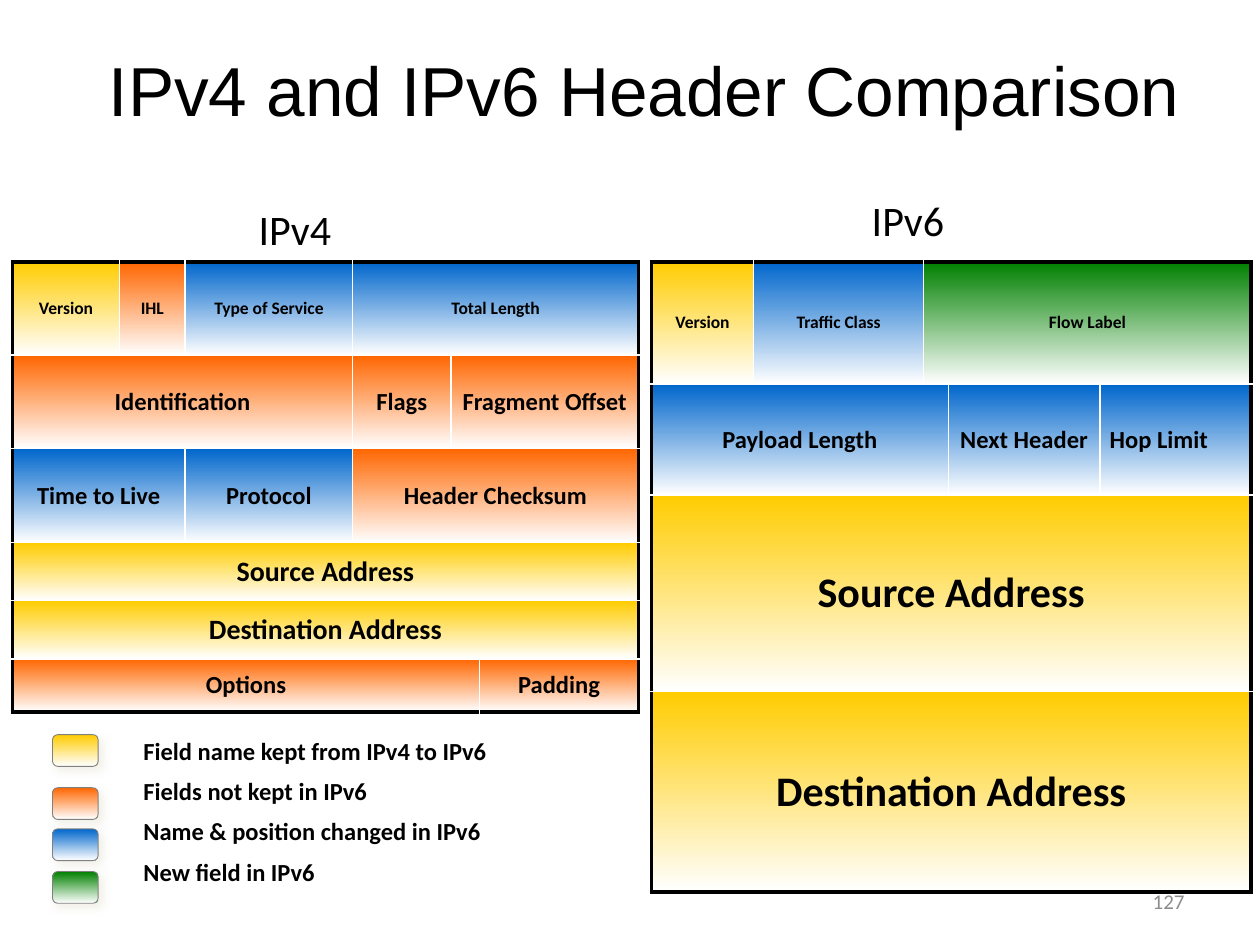
from dataclasses import dataclass

from lxml.etree import SubElement
from pptx import Presentation
from pptx.dml.color import RGBColor
from pptx.enum.shapes import MSO_SHAPE as Shape
from pptx.enum.text import MSO_ANCHOR as Anchor, MSO_AUTO_SIZE as AutoSize, PP_ALIGN as Align
from pptx.oxml.ns import qn
from pptx.util import Cm, Pt

COLORS = {
    "kept": "FFCC00",
    "dropped": "FF6600",
    "changed": "0066CC",
    "new": "008000",
    "white": "FFFFFF",
    "black": "000000",
    "outline": "808080",
    "shadow": "EEECE1",
    "number": "8C8C8C",
}


@dataclass
class Field:
    text: str
    status: str
    span: int = 1
    align: Align = Align.CENTER


@dataclass
class Row:
    height: float
    size: float
    fields: list[Field]


@dataclass
class Header:
    left: float
    top: float
    columns: list[float]
    rows: list[Row]


@dataclass
class Label:
    text: str
    box: tuple[float, float, float, float]
    size: float
    color: str
    align: Align
    wrap: bool = True


@dataclass
class LegendEntry:
    text: str
    status: str
    top: float


IPV4 = Header(0.25, 5.28, [2.16, 1.32, 3.38, 1.98, 0.58, 3.2], [
    Row(1.88, 10, [Field("Version", "kept"), Field("IHL", "dropped"),
                   Field("Type of Service", "changed"), Field("Total Length", "changed", 3)]),
    Row(1.88, 14, [Field("Identification", "dropped", 3), Field("Flags", "dropped"),
                   Field("Fragment Offset", "dropped", 2)]),
    Row(1.9, 14, [Field("Time to Live", "changed", 2), Field("Protocol", "changed"),
                  Field("Header Checksum", "dropped", 3)]),
    Row(1.17, 16, [Field("Source Address", "kept", 6)]),
    Row(1.17, 16, [Field("Destination Address", "kept", 6)]),
    Row(1.07, 14, [Field("Options", "dropped", 5), Field("Padding", "dropped")]),
])

IPV6 = Header(13.13, 5.28, [2.06, 3.43, 0.46, 3.05, 3.05], [
    Row(2.46, 10, [Field("Version", "kept"), Field("Traffic Class", "changed"),
                   Field("Flow Label", "new", 3)]),
    Row(2.24, 14, [Field("Payload Length", "changed", 3), Field("Next Header", "changed"),
                   Field("Hop Limit", "changed", 1, Align.LEFT)]),
    Row(3.96, 24, [Field("Source Address", "kept", 5)]),
    Row(4.04, 24, [Field("Destination Address", "kept", 5)]),
])

LABELS = [
    Label("IPv4", (4.88, 4.01, 2.13, 1.22), 24, "black", Align.CENTER, False),
    Label("IPv6", (14.81, 3.81, 6.99, 1.22), 24, "black", Align.CENTER),
    Label("127", (18.21, 17.65, 5.92, 1.02), 12, "number", Align.RIGHT),
]

LEGEND = [
    LegendEntry("Field name kept from IPv4 to IPv6", "kept", 14.81),
    LegendEntry("Fields not kept in IPv6", "dropped", 15.88),
    LegendEntry("Name & position changed in IPv6", "changed", 16.71),
    LegendEntry("New field in IPv6", "new", 17.57),
]


def rgb(name: str) -> RGBColor:
    return RGBColor.from_string(COLORS[name])


def place(shape, left: float, top: float, width: float, height: float) -> None:
    shape.left, shape.top, shape.width, shape.height = map(Cm, (left, top, width, height))


def format_runs(paragraph, size: float, font: str = "Calibri",
                color: str = "black", bold: bool = False) -> None:
    for run in paragraph.runs:
        run.font.name = font
        run.font.size = Pt(size)
        run.font.bold = bold
        run.font.color.rgb = rgb(color)


def fade(fill, status: str) -> None:
    fill.gradient()
    fill.gradient_angle = 270
    for stop, color, position in zip(fill.gradient_stops, (status, "white"), (0, 1)):
        stop.color.rgb = rgb(color)
        stop.position = position


def draw_borders(cell, outer: dict[str, bool]) -> None:
    properties = cell._tc.get_or_add_tcPr()
    for index, (side, is_outer) in enumerate(outer.items()):
        line = properties.makeelement(qn(f"a:{side}"), {"w": str(Pt(2.25 if is_outer else 1))})
        color = COLORS["black" if is_outer else "white"]
        SubElement(SubElement(line, qn("a:solidFill")), qn("a:srgbClr"), val=color)
        properties.insert(index, line)


def draw_header(slide, header: Header) -> None:
    row_count, column_count = len(header.rows), len(header.columns)
    frame = slide.shapes.add_table(
        row_count, column_count, Cm(header.left), Cm(header.top),
        Cm(sum(header.columns)), Cm(sum(row.height for row in header.rows)))
    table = frame.table
    table.first_row = table.horz_banding = False
    for column, width in zip(table.columns, header.columns):
        column.width = Cm(width)
    for row_index, row in enumerate(header.rows):
        table.rows[row_index].height = Cm(row.height)
        start = 0
        for field in row.fields:
            end = start + field.span
            cell = table.cell(row_index, start)
            if field.span > 1:
                cell.merge(table.cell(row_index, end - 1))
            outer = {"lnL": start == 0, "lnR": end == column_count,
                     "lnT": row_index == 0, "lnB": row_index == row_count - 1}
            for column_index in range(start, end):
                part = table.cell(row_index, column_index)
                fade(part.fill, field.status)
                draw_borders(part, outer)
            cell.margin_left = cell.margin_right = Cm(0.2)
            cell.margin_top = cell.margin_bottom = Cm(0.1)
            cell.vertical_anchor = Anchor.MIDDLE
            cell.text_frame.text = field.text
            paragraph = cell.text_frame.paragraphs[0]
            paragraph.alignment = field.align
            paragraph.line_spacing = 0.95
            format_runs(paragraph, row.size, bold=True)
            start = end


def draw_label(slide, label: Label) -> None:
    box = slide.shapes.add_textbox(*map(Cm, label.box))
    text_frame = box.text_frame
    text_frame.word_wrap = label.wrap
    text_frame.vertical_anchor = Anchor.MIDDLE
    text_frame.text = label.text
    paragraph = text_frame.paragraphs[0]
    paragraph.alignment = label.align
    format_runs(paragraph, label.size, color=label.color)


def draw_swatch(slide, entry: LegendEntry) -> None:
    swatch = slide.shapes.add_shape(
        Shape.ROUNDED_RECTANGLE, Cm(1.06), Cm(entry.top), Cm(0.92), Cm(0.64))
    fade(swatch.fill, entry.status)
    swatch.line.color.rgb = rgb("outline")
    swatch.line.width = Pt(0.5)
    swatch.shadow.inherit = False
    effects = swatch._element.spPr.find(qn("a:effectLst"))
    shadow = SubElement(effects, qn("a:outerShdw"), blurRad=str(Pt(5)), dist=str(Pt(3)),
                        dir="2700000", algn="ctr", rotWithShape="0")
    color = SubElement(shadow, qn("a:srgbClr"), val=COLORS["shadow"])
    SubElement(color, qn("a:alpha"), val="75000")


def fill_legend(body) -> None:
    place(body, -0.2, 14.78, 13.13, 3.4)
    text_frame = body.text_frame
    text_frame.auto_size = AutoSize.NONE
    text_frame.margin_left = text_frame.margin_right = Cm(0.23)
    text_frame.margin_top = text_frame.margin_bottom = Cm(0.1)
    text_frame.text = "\n".join(entry.text for entry in LEGEND)
    for index, paragraph in enumerate(text_frame.paragraphs):
        paragraph.line_spacing = 0.95
        paragraph.space_before = Pt(7 if index else 0)
        properties = paragraph._p.get_or_add_pPr()
        properties.set("marL", str(Cm(2.86)))
        properties.set("indent", "0")
        SubElement(properties, qn("a:buNone"))
        format_runs(paragraph, 14, bold=True)


def main() -> None:
    presentation = Presentation()
    presentation.slide_width, presentation.slide_height = Cm(25.4), Cm(19.05)
    slide = presentation.slides.add_slide(presentation.slide_layouts[1])
    title, body = slide.placeholders
    place(title, 1.04, 0.86, 23.9, 1.85)
    title.text_frame.text = "IPv4 and IPv6 Header Comparison"
    title.text_frame.auto_size = AutoSize.NONE
    format_runs(title.text_frame.paragraphs[0], 39.6, font="Arial")
    for header in (IPV4, IPV6):
        draw_header(slide, header)
    for label in LABELS:
        draw_label(slide, label)
    for entry in LEGEND:
        draw_swatch(slide, entry)
    fill_legend(body)
    presentation.save("out.pptx")


if __name__ == "__main__":
    main()
